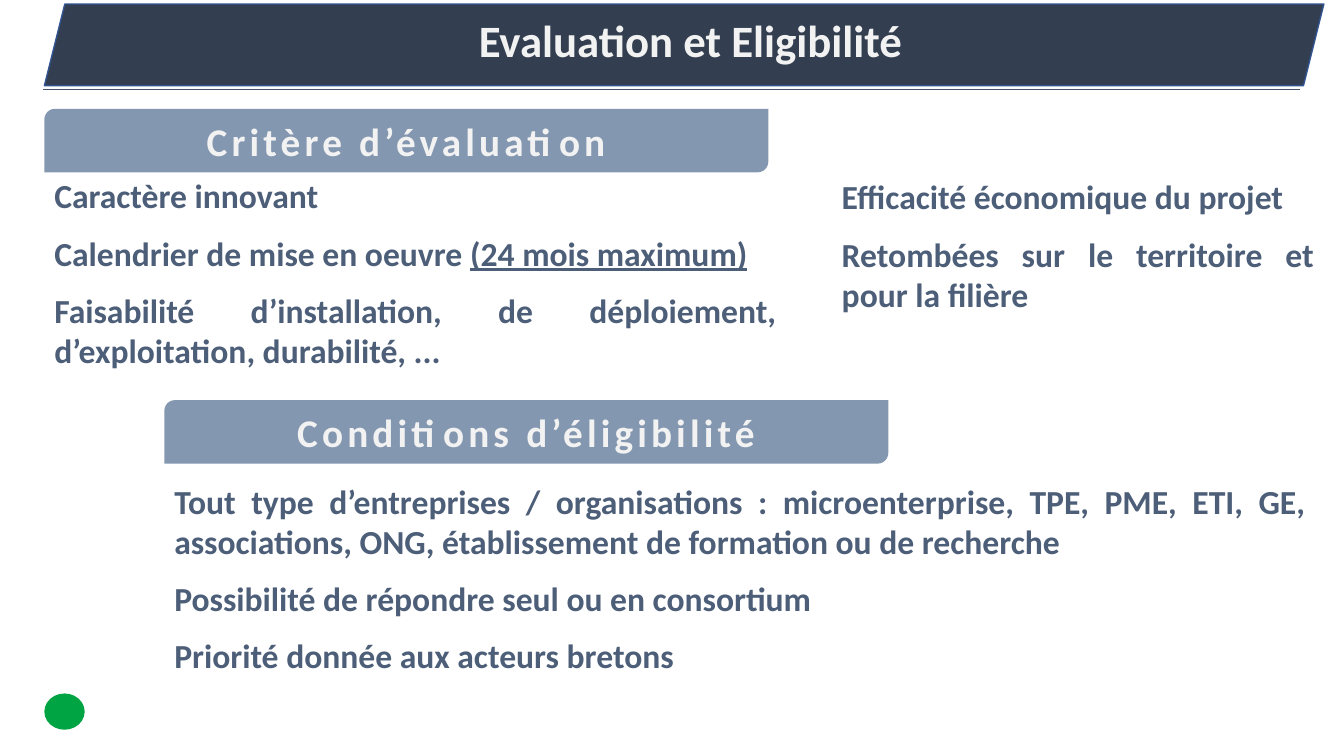
"""Build the slide on evaluation criteria and eligibility conditions."""
from dataclasses import dataclass

from lxml import etree
from pptx import Presentation
from pptx.dml.color import RGBColor
from pptx.enum import shapes, text
from pptx.oxml.ns import qn
from pptx.util import Inches, Pt


@dataclass(frozen=True)
class Theme:
    """Colours, font and type sizes of the slide."""
    font: str = "Calibri"
    light: str = "F2F2F2"
    body: str = "4C5E78"
    banner: str = "333F50"
    banner_line: str = "325491"
    heading: str = "8497B0"
    rule: str = "44546A"
    emblem: str = "00A443"
    title_size: int = 32
    heading_size: int = 28
    body_size: int = 24
    tracking: int = 300


@dataclass(frozen=True)
class Box:
    """Position and size in inches."""
    left: float
    top: float
    width: float
    height: float

    def emu(self) -> list[int]:
        """Return the lengths in the order that shapes take them."""
        return [Inches(v) for v in (self.left, self.top, self.width, self.height)]


@dataclass(frozen=True)
class Heading:
    """A section heading on a rounded bar."""
    box: Box
    label: str


@dataclass(frozen=True)
class Body:
    """Justified paragraphs, each with an optional underlined ending."""
    box: Box
    items: tuple[tuple[str, str], ...]


THEME = Theme()
MARGIN, INDENT = 0.44, 1.63
HEADINGS = (
    Heading(Box(MARGIN, 1.08, 7.18, 0.63), "Critère d’évaluation"),
    Heading(Box(INDENT, 3.97, 7.18, 0.63), "Conditions d’éligibilité"),
)
BODIES = (
    Body(Box(MARGIN, 1.69, 7.36, 2.05), (
        ("Caractère innovant", ""),
        ("Calendrier de mise en oeuvre ", "(24 mois maximum)"),
        ("Faisabilité d’installation, de déploiement, d’exploitation, durabilité, ...", ""),
    )),
    Body(Box(8.25, 1.7, 4.88, 1.48), (
        ("Efficacité économique du projet", ""),
        ("Retombées sur le territoire et pour la filière", ""),
    )),
    Body(Box(INDENT, 4.72, 11.42, 2.05), (
        ("Tout type d’entreprises / organisations : microenterprise, TPE, PME, ETI, GE, "
         "associations, ONG, établissement de formation ou de recherche", ""),
        ("Possibilité de répondre seul ou en consortium", ""),
        ("Priorité donnée aux acteurs bretons", ""),
    )),
)


def style(p, size: int, color: str) -> None:
    """Set the bold type of a paragraph."""
    p.font.name = THEME.font
    p.font.size = Pt(size)
    p.font.bold = True
    p.font.color.rgb = RGBColor.from_string(color)


def add_block(slide, kind, box: Box, fill: str, line: str = ""):
    """Add a flat preset shape, outlined only when a line colour is given."""
    sp = slide.shapes.add_shape(kind, *box.emu())
    sp.shadow.inherit = False
    sp.fill.solid()
    sp.fill.fore_color.rgb = RGBColor.from_string(fill)
    if line:
        sp.line.color.rgb = RGBColor.from_string(line)
        sp.line.width = Pt(1)
    else:
        sp.line.fill.background()
    return sp


def add_rule(slide) -> None:
    """Add the thin line below the banner."""
    y = Inches(0.89)
    line = slide.shapes.add_connector(
        shapes.MSO_CONNECTOR.STRAIGHT, Inches(0.43), y, Inches(12.89), y)
    line.line.color.rgb = RGBColor.from_string(THEME.rule)
    line.line.width = Pt(0.5)
    etree.SubElement(line._element.spPr, qn("a:effectLst"))


def add_title(slide, label: str) -> None:
    """Add the slanted banner and its title."""
    add_block(slide, shapes.MSO_SHAPE.PARALLELOGRAM, Box(MARGIN, 0.04, 12.69, 0.81),
              THEME.banner, THEME.banner_line)
    tf = slide.shapes.add_textbox(*Box(4.65, 0.14, 5.38, 0.57).emu()).text_frame
    tf.word_wrap = True
    p = tf.paragraphs[0]
    p.text = label
    p.line_spacing = 0.9
    p.space_before = Pt(10)
    style(p, THEME.title_size, THEME.light)


def add_heading(slide, heading: Heading) -> None:
    """Add a section bar with letter-spaced text."""
    sp = add_block(slide, shapes.MSO_SHAPE.ROUND_2_DIAG_RECTANGLE, heading.box, THEME.heading)
    p = sp.text_frame.paragraphs[0]
    p.alignment = text.PP_ALIGN.CENTER
    style(p, THEME.heading_size, THEME.light)
    r = p.add_run()
    r.text = heading.label
    r._r.get_or_add_rPr().set("spc", str(THEME.tracking))


def add_body(slide, body: Body) -> None:
    """Add a text box of justified paragraphs."""
    tf = slide.shapes.add_textbox(*body.box.emu()).text_frame
    tf.word_wrap = True
    tf.auto_size = text.MSO_AUTO_SIZE.SHAPE_TO_FIT_TEXT
    for i, (plain, underlined) in enumerate(body.items):
        p = tf.add_paragraph() if i else tf.paragraphs[0]
        p.alignment = text.PP_ALIGN.JUSTIFY
        p.space_before = p.space_after = Pt(6)
        style(p, THEME.body_size, THEME.body)
        p.add_run().text = plain
        if underlined:
            r = p.add_run()
            r.text = underlined
            r.font.underline = True


def main() -> None:
    """Build and save the presentation."""
    prs = Presentation()
    prs.slide_width, prs.slide_height = Inches(13.33), Inches(7.5)
    slide = prs.slides.add_slide(prs.slide_layouts[6])
    add_rule(slide)
    add_block(slide, shapes.MSO_SHAPE.OVAL, Box(MARGIN, 6.88, 0.4, 0.36), THEME.emblem)
    add_title(slide, "Evaluation et Eligibilité")
    for heading in HEADINGS:
        add_heading(slide, heading)
    for body in BODIES:
        add_body(slide, body)
    prs.save("out.pptx")


if __name__ == "__main__":
    main()
